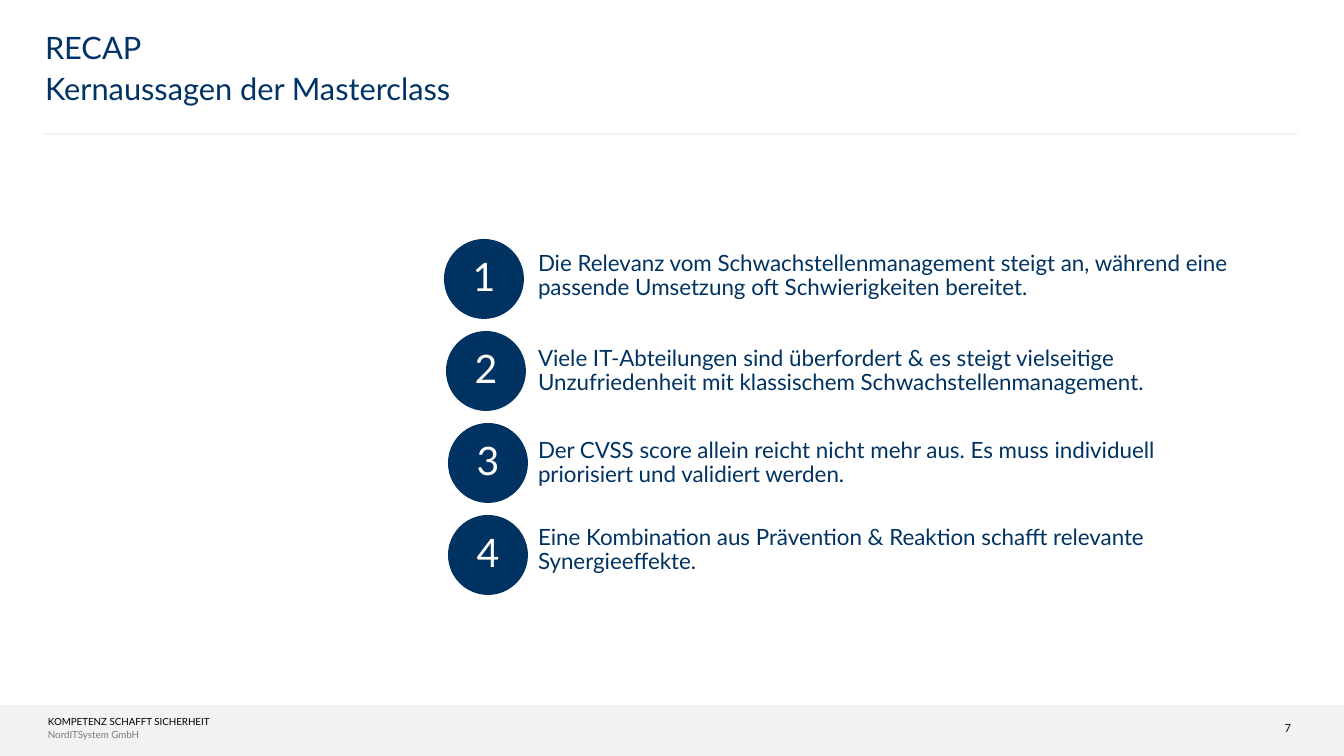
from lxml import etree
from pptx import Presentation
from pptx.dml.color import RGBColor
from pptx.enum.shapes import MSO_CONNECTOR, MSO_SHAPE
from pptx.enum.text import MSO_ANCHOR, PP_ALIGN
from pptx.oxml.ns import qn
from pptx.util import Pt

CENTER, LEFT = PP_ALIGN.CENTER, PP_ALIGN.LEFT
MIDDLE = MSO_ANCHOR.MIDDLE
OVAL, RECTANGLE = MSO_SHAPE.OVAL, MSO_SHAPE.RECTANGLE
STRAIGHT = MSO_CONNECTOR.STRAIGHT

PX = 914400 / 100.8
COLORS = {
    "title": "003366",
    "navy": "003361",
    "white": "FFFFFF",
    "band": "F2F2F2",
    "black": "000000",
    "page": "0D0D0D",
    "company": "7C7B7B",
}


def px(*lengths):
    return [round(length * PX) for length in lengths]


def write(shape, lines, size, insets=(10, 5, 10, 5), align=LEFT, spacing=1.0, wrap=True):
    """Fill a shape with (text, color) lines, one paragraph each."""
    frame = shape.text_frame
    frame.word_wrap = wrap
    (frame.margin_left, frame.margin_top,
     frame.margin_right, frame.margin_bottom) = px(*insets)
    for index, (text, color) in enumerate(lines):
        paragraph = frame.add_paragraph() if index else frame.paragraphs[0]
        paragraph.text = text
        paragraph.alignment = align
        paragraph.line_spacing = spacing
        paragraph.space_before = Pt(0.5 if index else 0)
        paragraph.font.name = "Lato"
        paragraph.font.size = Pt(size)
        paragraph.font.color.rgb = RGBColor.from_string(COLORS[color])


prs = Presentation()
prs.slide_width, prs.slide_height = px(1344, 756)
slide = prs.slides.add_slide(prs.slide_layouts[6])
shapes = slide.shapes

# Footer
footer_band = shapes.add_shape(RECTANGLE, *px(0, 705, 1344, 51))
footer_band.shadow.inherit = False
footer_band.fill.solid()
footer_band.fill.fore_color.rgb = RGBColor.from_string(COLORS["band"])
footer_band.line.fill.background()

page_number = shapes.add_textbox(*px(1279, 721, 18, 12))
write(page_number, [("7", "page")], 8, (0, 0, 0, 0), align=CENTER, wrap=False)

claim = shapes.add_textbox(*px(44, 716, 269, 18))
write(claim, [("KOMPETENZ SCHAFFT SICHERHEIT", "black"), ("NordITSystem GmbH", "company")],
      7, (4, 0, 4, 0))

# Heading
rule = shapes.add_connector(STRAIGHT, *px(44, 134, 1298, 134))
rule.line.width = Pt(0.25)
rule.line.color.rgb = RGBColor.from_string(COLORS["black"])
rule_color = rule.line._ln.find(".//" + qn("a:srgbClr"))
etree.SubElement(rule_color, qn("a:alpha"), val="35000")
etree.SubElement(rule._element.spPr, qn("a:effectLst"))

title = shapes.add_textbox(*px(45, 33, 840, 40))
write(title, [("RECAP", "title")], 22, (0, 0, 0, 0), spacing=0.9)

subtitle = shapes.add_textbox(*px(45, 70, 840, 47))
write(subtitle, [("Kernaussagen der Masterclass", "title")], 22, (0, 0, 0, 0))

# Key messages: circle left, message top, message height, message
KEY_MESSAGES = [
    (444, 247, 64, "Die Relevanz vom Schwachstellenmanagement steigt an, während eine "
                   "passende Umsetzung oft Schwierigkeiten bereitet."),
    (446, 342, 67, "Viele IT-Abteilungen sind überfordert & es steigt vielseitige "
                   "Unzufriedenheit mit klassischem Schwachstellenmanagement."),
    (448, 434, 67, "Der CVSS score allein reicht nicht mehr aus. Es muss individuell "
                   "priorisiert und validiert werden."),
    (448, 521, 79, "Eine Kombination aus Prävention & Reaktion schafft relevante "
                   "Synergieeffekte."),
]
CIRCLE_TOP, CIRCLE_PITCH, CIRCLE_SIZE = 239, 92, 80

for row, (circle_left, message_top, message_height, text) in enumerate(KEY_MESSAGES):
    message = shapes.add_textbox(*px(528, message_top, 732, message_height))
    write(message, [(text, "navy")], 16, spacing=0.9)

    circle = shapes.add_shape(
        OVAL, *px(circle_left, CIRCLE_TOP + row * CIRCLE_PITCH, CIRCLE_SIZE, CIRCLE_SIZE))
    circle.shadow.inherit = False
    circle.fill.solid()
    circle.fill.fore_color.rgb = RGBColor.from_string(COLORS["navy"])
    circle.line.fill.background()
    circle.text_frame.vertical_anchor = MIDDLE
    write(circle, [(str(row + 1), "white")], 28, align=CENTER, spacing=0.9)

prs.save("out.pptx")
